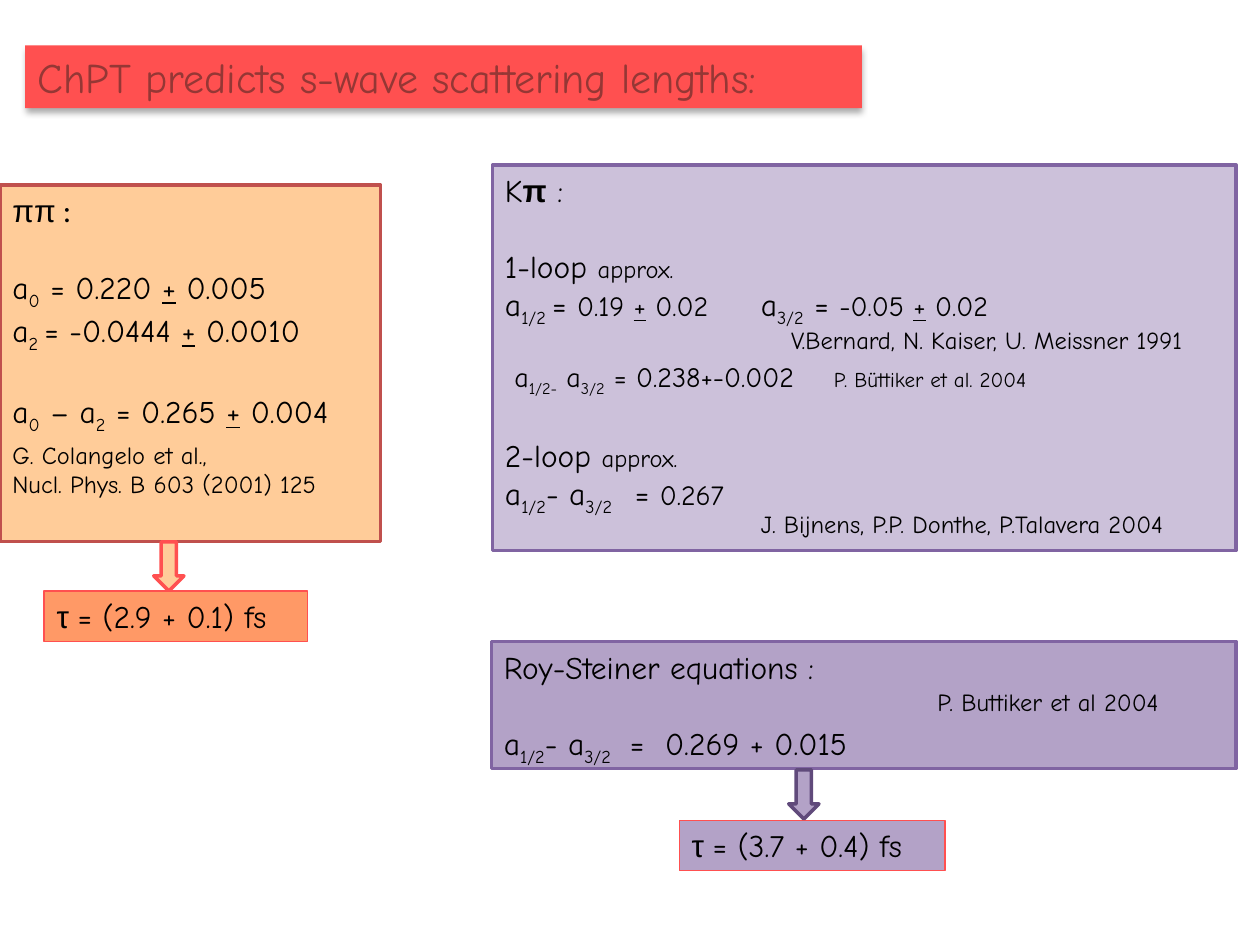
"""Build a slide of ChPT predictions for s-wave scattering lengths."""
from lxml import etree
from pptx import Presentation
from pptx.dml.color import RGBColor
from pptx.enum.shapes import MSO_SHAPE
from pptx.enum.text import MSO_ANCHOR, PP_ALIGN
from pptx.oxml.ns import qn
from pptx.util import Inches, Pt

RECT, ARROW = MSO_SHAPE.RECTANGLE, MSO_SHAPE.DOWN_ARROW
TOP, LEFT = MSO_ANCHOR.TOP, PP_ALIGN.LEFT
HAND, GREEK = "Comic Neue", "Arial"
BLACK, PURPLE, LILAC, RED, PEACH = "000000", "8064A2", "B3A2C7", "FF5050", "FFCC99"


def normal(text, size=18, font=HAND, bold=False):
    return {"text": text, "size": size, "font": font, "bold": bold}


def scattering(index, size=18, lead=""):
    return [normal(lead + "a", size), {**normal(index, size), "baseline": "-25000"}]


def measured(value, error, size=18):
    return [normal(value + " ", size), {**normal("+", size), "underline": True},
            normal(" " + error, size)]


def line(*spans, before=0, tabs=()):
    return {"spans": spans, "before": before, "tabs": tabs}


def lifetime(value):
    return [line(normal("τ ", font=GREEK), normal(f"= ({value}) fs"))]


KAON_PION = [
    line(normal("K"), normal("π", font=GREEK, bold=True), normal(" :")),
    line(normal("1-loop "), normal("approx.", 14), before=22),
    line(*scattering("1/2 "), normal("= "), *measured("0.19", "0.02", 16),
         normal("\t"), *scattering("3/2"), normal(" = "),
         *measured("-0.05", "0.02", 16), tabs=[2.03]),
    line(*scattering("1/2-", 16, " "), *scattering("3/2", 16, " "),
         normal(" = 0.238+-0.002", 16), normal("\tP. Büttiker et al. 2004", 12),
         before=18, tabs=[2.61]),
    line(normal("2-loop "), normal("approx.", 14), before=22),
    line(*scattering("1/2"), *scattering("3/2", lead="- "), normal("\t= "),
         normal("0.267", 16), tabs=[1.03]),
]
ROY_STEINER = [
    line(normal("Roy-Steiner equations :")),
    line(*scattering("1/2"), *scattering("3/2", lead="- "),
         normal("\t=\t0.269 + 0.015"), before=22, tabs=[1, 1.28]),
]
PION_PION = [
    line(normal("ππ", font=GREEK), normal(" :", font="Calibri")),
    line(*scattering("0"), normal(" = "), *measured("0.220", "0.005"), before=22),
    line(*scattering("2 "), normal("= "), *measured("-0.0444", "0.0010")),
    line(*scattering("0"), *scattering("2", lead=" – "), normal(" = "),
         *measured("0.265", "0.004"), before=22),
]
TITLE = [line(normal("ChPT predicts s-wave scattering lengths:", 24))]

PANELS = [
    (RECT, (3.91, 1.31, 5.9, 3.06), "CCC1DA", PURPLE, 2, KAON_PION),
    (RECT, (3.9, 5.09, 5.91, 1.01), LILAC, PURPLE, 2, ROY_STEINER),
    (RECT, (0, 1.47, 3.02, 2.83), PEACH, "C0504D", 2, PION_PION),
    (ARROW, (1.22, 4.3, 0.24, 0.39), PEACH, RED, 2, []),
    (RECT, (0.35, 4.69, 2.09, 0.4), "FF9966", RED, 0.75, lifetime("2.9 + 0.1")),
    (RECT, (5.39, 6.51, 2.11, 0.4), LILAC, RED, 0.75, lifetime("3.7 + 0.4")),
    (ARROW, (6.26, 6.11, 0.24, 0.39), LILAC, "604A7B", 2, []),
]
CITATIONS = [
    ((0, 3.44, 2.87, 0.57), ["G. Colangelo et al.,", "Nucl. Phys. B 603 (2001) 125"]),
    ((6.18, 2.53, 3.8, 0.34), ["V.Bernard, N. Kaiser, U. Meissner 1991"]),
    ((5.94, 3.99, 3.82, 0.34), ["J. Bijnens, P.P. Donthe, P.Talavera 2004"]),
    ((7.34, 5.4, 2.25, 0.34), ["P. Buttiker et al 2004"]),
]


def color(value):
    return RGBColor.from_string(value)


def write(box, lines, ink=BLACK):
    frame = box.text_frame
    frame.word_wrap = True
    frame.vertical_anchor = TOP
    for index, content in enumerate(lines):
        para = frame.add_paragraph() if index else frame.paragraphs[0]
        para.alignment = LEFT
        para.space_before = Pt(content["before"])
        if content["tabs"]:
            stops = etree.SubElement(para._p.get_or_add_pPr(), qn("a:tabLst"))
            for stop in content["tabs"]:
                etree.SubElement(stops, qn("a:tab"), pos=str(Inches(stop)), algn="l")
        for style in content["spans"]:
            span = para.add_run()
            span.text = style["text"]
            span.font.size = Pt(style["size"])
            span.font.name = style["font"]
            span.font.bold = style["bold"]
            span.font.underline = style.get("underline", False)
            span.font.color.rgb = color(ink)
            if "baseline" in style:
                span._r.get_or_add_rPr().set("baseline", style["baseline"])


def add_panel(page, kind, place, fill, edge, width, lines, ink=BLACK):
    box = page.shapes.add_shape(kind, *map(Inches, place))
    box.shadow.inherit = False
    box.fill.solid()
    box.fill.fore_color.rgb = color(fill)
    if edge:
        box.line.color.rgb = color(edge)
        box.line.width = Pt(width)
    else:
        box.line.fill.background()
    write(box, lines, ink)
    return box


def add_shadow(box):
    effects = box._element.spPr.find(qn("a:effectLst"))
    shadow = etree.SubElement(effects, qn("a:outerShdw"), blurRad=str(Pt(3.5)),
                              dist=str(Pt(2.2)), dir="5400000", rotWithShape="0")
    shade = etree.SubElement(shadow, qn("a:srgbClr"), val=BLACK)
    etree.SubElement(shade, qn("a:alpha"), val="32000")


def main():
    deck = Presentation()
    deck.slide_width, deck.slide_height = Inches(10), Inches(7.5)
    page = deck.slides.add_slide(deck.slide_layouts[6])
    add_shadow(add_panel(page, RECT, (0.2, 0.36, 6.64, 0.5), RED, None, 0, TITLE, "953735"))
    for panel in PANELS:
        add_panel(page, *panel)
    for place, texts in CITATIONS:
        box = page.shapes.add_textbox(*map(Inches, place))
        write(box, [line(normal(text, 14)) for text in texts])
    deck.save("out.pptx")


if __name__ == "__main__":
    main()
